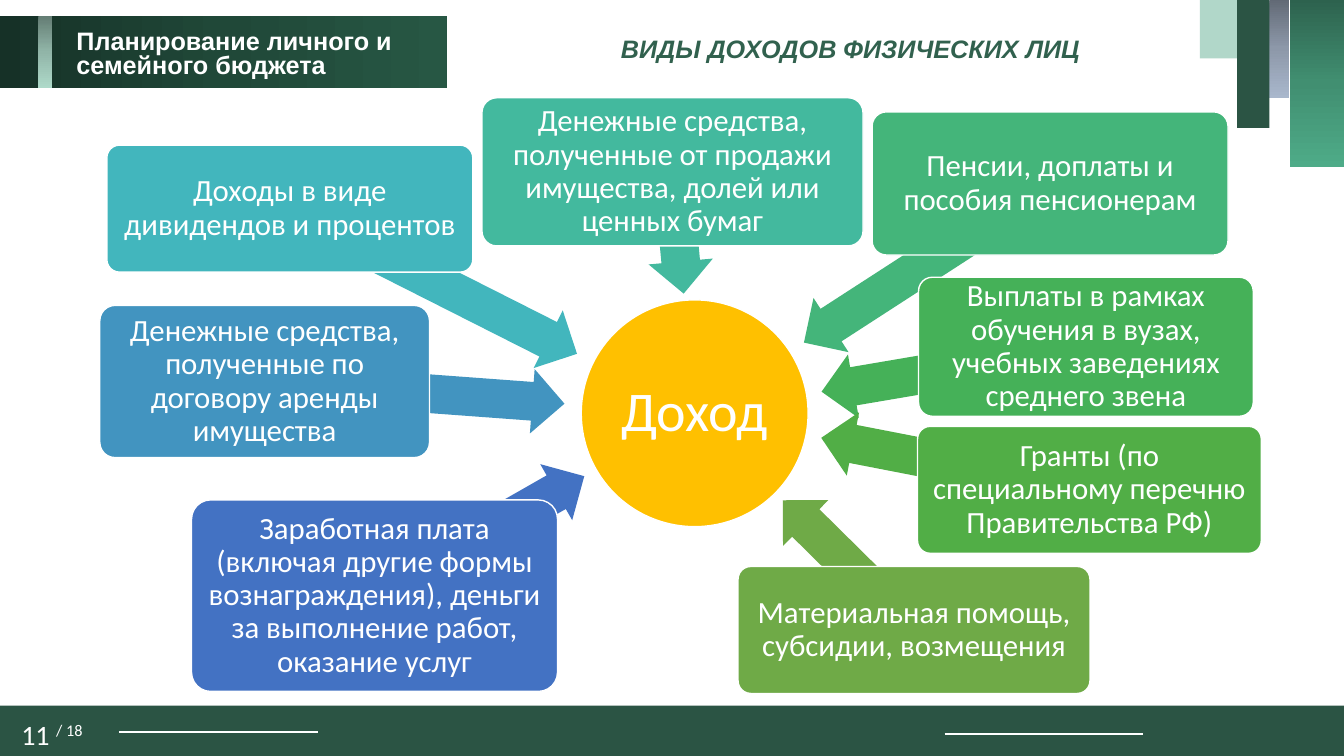
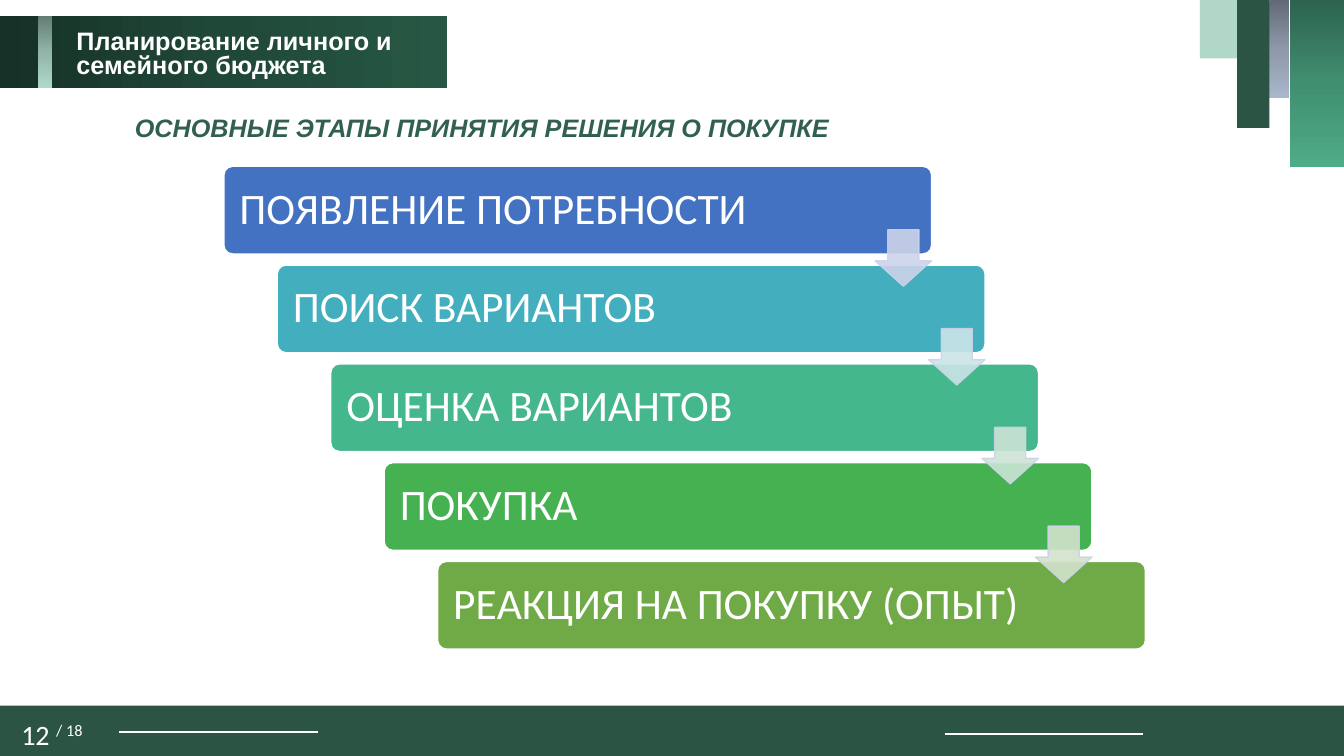
from math import atan2, degrees, hypot

from lxml import etree
from pptx import Presentation
from pptx.dml.color import RGBColor
from pptx.enum.shapes import MSO_CONNECTOR, MSO_SHAPE
from pptx.enum.text import MSO_ANCHOR, PP_ALIGN
from pptx.oxml import parse_xml
from pptx.oxml.ns import nsdecls, qn
from pptx.util import Inches, Pt

RECT = MSO_SHAPE.RECTANGLE
ROUND = MSO_SHAPE.ROUNDED_RECTANGLE
OVAL = MSO_SHAPE.OVAL
LEFT_ARROW = MSO_SHAPE.LEFT_ARROW
DOWN_ARROW = MSO_SHAPE.DOWN_ARROW
STRAIGHT = MSO_CONNECTOR.STRAIGHT
MIDDLE, TOP = MSO_ANCHOR.MIDDLE, MSO_ANCHOR.TOP
LEFT, CENTER = PP_ALIGN.LEFT, PP_ALIGN.CENTER

WHITE = RGBColor(0xFF, 0xFF, 0xFF)
GREEN = RGBColor(0x2B, 0x54, 0x44)
MINT = RGBColor(0xB1, 0xD7, 0xC9)
HEAD = RGBColor(0x31, 0x61, 0x4E)
GOLD = RGBColor(0xFF, 0xC0, 0x00)
BLUE = RGBColor(0x43, 0x72, 0xC3)
OLIVE = RGBColor(0x6F, 0xAA, 0x47)
EDGE = RGBColor(0xCC, 0xD3, 0xEA)

# Gradient stops at 0, 50 and 100 %
STEEL = ("616975", "8D98A9", "A9B7CC")
FOREST = ("2D624E", "418F71", "4EAB88")
DARK = ("163127", "204838", "275744")
PALE = ("647D74", "91B5A8", "AED9C9")

SANS, BODY = "Arial", "Calibri"
TITLE = ("Планирование личного и", "семейного бюджета")
TOTAL = 18

# Income hub: centre and diameter
HUB_X, HUB_Y, HUB_D = 6.89, 4.1, 2.25
ARROW_H = 0.64

# Income cards: left, top, width, height, colour, text
CARDS = (
    (1.9, 4.96, 3.63, 1.9, BLUE,
     "Заработная плата (включая другие формы вознаграждения), "
     "деньги за выполнение работ, оказание услуг"),
    (0.99, 3.03, 3.27, 1.51, RGBColor(0x42, 0x94, 0xC0),
     "Денежные средства, полученные по договору аренды имущества"),
    (1.06, 1.44, 3.63, 1.26, RGBColor(0x42, 0xB6, 0xBD),
     "Доходы в виде дивидендов и процентов"),
    (4.78, 0.97, 3.78, 1.47, RGBColor(0x43, 0xB9, 0x9E),
     "Денежные средства, полученные от продажи имущества, "
     "долей или ценных бумаг"),
    (8.65, 1.11, 3.53, 1.42, RGBColor(0x44, 0xB5, 0x7A),
     "Пенсии, доплаты и пособия пенсионерам"),
    (9.11, 2.75, 3.32, 1.38, RGBColor(0x45, 0xB1, 0x58),
     "Выплаты в рамках обучения в вузах, "
     "учебных заведениях среднего звена"),
    (9.1, 4.23, 3.41, 1.26, RGBColor(0x51, 0xAE, 0x46),
     "Гранты (по специальному перечню Правительства РФ)"),
    (7.32, 5.62, 3.49, 1.26, OLIVE,
     "Материальная помощь, субсидии, возмещения"),
)

# Purchase steps, and the colours of the arrows between them
STEPS = (
    ("ПОЯВЛЕНИЕ ПОТРЕБНОСТИ", BLUE),
    ("ПОИСК ВАРИАНТОВ", RGBColor(0x43, 0xAE, 0xBD)),
    ("ОЦЕНКА ВАРИАНТОВ", RGBColor(0x44, 0xB7, 0x8C)),
    ("ПОКУПКА", RGBColor(0x45, 0xB1, 0x50)),
    ("РЕАКЦИЯ НА ПОКУПКУ (ОПЫТ)", OLIVE),
)
LINKS = (EDGE, RGBColor(0xCB, 0xE4, 0xE7),
         RGBColor(0xCC, 0xE4, 0xD5), RGBColor(0xD2, 0xE2, 0xCB))
STEP_X, STEP_Y = 0.53, 0.98


def add_form(slide, kind, box, fill, line=None, adj=()):
    """Preset shape with a plain fill and an optional thin outline."""
    form = slide.shapes.add_shape(kind, *map(Inches, box))
    form.shadow.inherit = False
    form.fill.solid()
    form.fill.fore_color.rgb = fill
    if line is None:
        form.line.fill.background()
    else:
        form.line.color.rgb = line
        form.line.width = Pt(1)
    for i, part in enumerate(adj):
        form.adjustments[i] = part
    return form


def add_blend(slide, box, stops, angle):
    """Rectangle with a three-stop gradient."""
    props = add_form(slide, RECT, box, GREEN)._element.spPr
    marks = "".join(
        f'<a:gs pos="{i * 50000}"><a:srgbClr val="{tint}"/></a:gs>'
        for i, tint in enumerate(stops))
    grad = parse_xml(
        f'<a:gradFill {nsdecls("a")} rotWithShape="1"><a:gsLst>{marks}</a:gsLst>'
        f'<a:lin ang="{angle * 60000}" scaled="0"/></a:gradFill>')
    props.replace(props.find(qn("a:solidFill")), grad)


def add_rule(slide, x, y, width):
    rule = slide.shapes.add_connector(
        STRAIGHT, Inches(x), Inches(y), Inches(x + width), Inches(y))
    rule.line.color.rgb = WHITE
    rule.line.width = Pt(1.5)
    etree.SubElement(rule._element.spPr, qn("a:effectLst"))


def set_frame(form, pad, anchor):
    frame = form.text_frame
    frame.word_wrap = True
    frame.vertical_anchor = anchor
    frame.margin_left = frame.margin_right = Inches(pad[0])
    frame.margin_top = frame.margin_bottom = Inches(pad[1])
    return frame


def set_font(para, size, face=BODY, color=WHITE, bold=False, italic=False):
    font = para.font
    font.size, font.name = Pt(size), face
    font.bold, font.italic = bold, italic
    font.color.rgb = color


def add_label(form, text, size, pad, align=CENTER):
    """Centred-height text inside a shape."""
    para = set_frame(form, (pad, pad), MIDDLE).paragraphs[0]
    para.text = text
    para.alignment = align
    para.line_spacing = 0.9
    set_font(para, size)


def add_text(slide, box, lines, spacing=1.0, **style):
    """Text box with one paragraph per line."""
    area = slide.shapes.add_textbox(*map(Inches, box))
    frame = set_frame(area, (0.1, 0.05), TOP)
    for i, text in enumerate(lines):
        para = frame.add_paragraph() if i else frame.paragraphs[0]
        para.text = text
        para.line_spacing = spacing
        set_font(para, **style)
    return frame


def add_page(deck, number, head, box):
    """Slide with the shared footer, corner bars, title band and heading."""
    slide = deck.slides.add_slide(deck.slide_layouts[6])

    # Footer
    add_form(slide, RECT, (0, 7, 13.33, 0.52), GREEN)
    add_rule(slide, 1.18, 7.26, 1.97)
    add_rule(slide, 9.37, 7.28, 1.97)
    frame = add_text(slide, (-0.03, 7.13, 1.09, 0.38), [f"{number} "], 0.8, size=20)
    para = frame.paragraphs[0]
    para.alignment = CENTER
    total = para.add_run()
    total.text = f"/ {TOTAL}"
    total._r.get_or_add_rPr().set("baseline", "30000")

    # Corner bars
    add_blend(slide, (12.59, -0.01, 0.2, 0.98), STEEL, 90)
    add_blend(slide, (12.79, -0.01, 0.56, 1.67), FOREST, 90)
    add_form(slide, RECT, (11.9, -0.01, 0.38, 0.59), MINT)
    add_form(slide, RECT, (12.27, -0.01, 0.32, 1.28), GREEN)

    # Title band and heading
    add_blend(slide, (0, 0.16, 4.43, 0.71), DARK, 0)
    add_blend(slide, (0.38, 0.16, 0.14, 0.71), PALE, 90)
    add_text(slide, (0.66, 0.26, 3.36, 0.59), TITLE, 0.8,
             size=18, face=SANS, bold=True)
    add_text(slide, box, [head], size=18, face=SANS, color=HEAD,
             bold=True, italic=True)
    return slide


def add_spoke(slide, box, color):
    """Arrow from the centre of a card towards the hub."""
    left, top, width, height = box
    x, y = left + width / 2, top + height / 2
    dx, dy = x - HUB_X, y - HUB_Y
    gap = hypot(dx, dy)
    size = 0.945 * gap - 1.06
    mid_x = x - dx / gap * size / 2
    mid_y = y - dy / gap * size / 2
    spoke = add_form(
        slide, LEFT_ARROW,
        (mid_x - size / 2, mid_y - ARROW_H / 2, size, ARROW_H),
        color, adj=(0.6, 0.5))
    spoke.rotation = degrees(atan2(dy, dx)) % 360


def add_income(deck):
    slide = add_page(deck, 11, "ВИДЫ ДОХОДОВ ФИЗИЧЕСКИХ ЛИЦ",
                     (6.06, 0.28, 4.8, 0.4))
    hub = add_form(slide, OVAL,
                   (HUB_X - HUB_D / 2, HUB_Y - HUB_D / 2, HUB_D, HUB_D),
                   GOLD, WHITE)
    add_label(hub, "Доход", 40, 0.03)
    for *box, color, text in CARDS:
        add_spoke(slide, box, color)
        card = add_form(slide, ROUND, box, color, WHITE, (0.1,))
        add_label(card, text, 22, 0.05)


def add_steps(deck):
    slide = add_page(deck, 12, "ОСНОВНЫЕ ЭТАПЫ ПРИНЯТИЯ РЕШЕНИЯ О ПОКУПКЕ",
                     (1.24, 1.07, 7.16, 0.4))
    for i, (text, color) in enumerate(STEPS):
        box = (2.22 + i * STEP_X, 1.65 + i * STEP_Y, 7.02, 0.87)
        step = add_form(slide, ROUND, box, color, WHITE, (0.1,))
        add_label(step, text, 31, 0.13, LEFT)

    # Translucent arrows between the steps
    for i, color in enumerate(LINKS):
        box = (8.68 + i * STEP_X, 2.28 + i * STEP_Y, 0.56, 0.56)
        link = add_form(slide, DOWN_ARROW, box, color, EDGE, (0.55, 0.45))
        for tint in link._element.spPr.iter(qn("a:srgbClr")):
            etree.SubElement(tint, qn("a:alpha"), val="90000")


def main():
    deck = Presentation()
    deck.slide_width, deck.slide_height = Inches(13.33), Inches(7.5)
    add_income(deck)
    add_steps(deck)
    deck.save("out.pptx")


if __name__ == "__main__":
    main()
